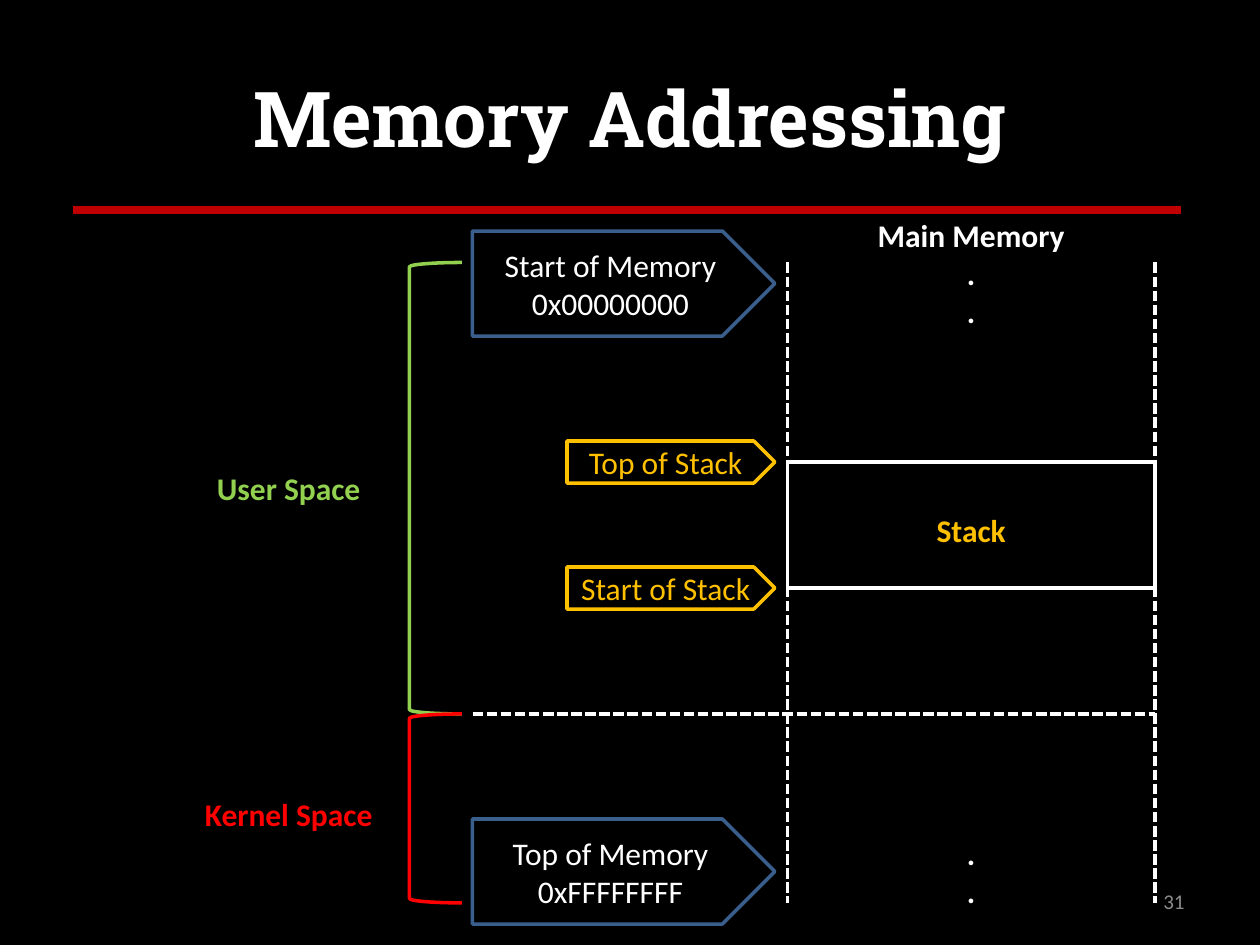
from lxml.etree import SubElement
from pptx import Presentation
from pptx.dml.color import RGBColor
from pptx.enum.dml import MSO_LINE
from pptx.enum.shapes import MSO_CONNECTOR, MSO_SHAPE
from pptx.enum.text import MSO_ANCHOR, PP_ALIGN
from pptx.oxml.ns import qn
from pptx.util import Pt

COLORS = {
    "black": "000000", "white": "FFFFFF", "rule": "C00000", "blue": "3A5F8C",
    "gold": "FFC000", "green": "92D050", "red": "FF0000", "gray": "8C8C8C",
}
MEMORY_LEFT, MEMORY_RIGHT = 450, 660
MEMORY_TOP, MEMORY_BOTTOM = 150, 516
MEMORY_WIDTH = MEMORY_RIGHT - MEMORY_LEFT
KERNEL_TOP = 408
POINTER_TIP = 442.8


def color(name):
    return RGBColor.from_string(COLORS[name])


def write(shape, lines, color_name, size=18, bold=False, font="Calibri", align=PP_ALIGN.CENTER):
    """Fill a shape with one vertically centred paragraph per line."""
    frame = shape.text_frame
    frame.text = "\n".join(lines)
    frame.word_wrap = True
    frame.vertical_anchor = MSO_ANCHOR.MIDDLE
    for paragraph in frame.paragraphs:
        paragraph.alignment = align
        for name, value in {"name": font, "size": Pt(size), "bold": bold}.items():
            setattr(paragraph.font, name, value)
        paragraph.font.color.rgb = color(color_name)


presentation = Presentation()
presentation.slide_width, presentation.slide_height = Pt(720), Pt(540)
slide = presentation.slides.add_slide(presentation.slide_layouts[5])
slide.background.fill.solid()
slide.background.fill.fore_color.rgb = color("black")

title = slide.shapes.title
title.left, title.top, title.width, title.height = Pt(36), Pt(21.6), Pt(648), Pt(90)
write(title, ["Memory Addressing"], "white", size=44, bold=True, font="Roboto Slab")

# Title rule, memory edges and the border between user and kernel space
for x1, y1, x2, y2, color_name, width, dash in [
    (42, 120, 675, 120, "rule", 5, None),
    (MEMORY_LEFT, MEMORY_TOP, MEMORY_LEFT, MEMORY_BOTTOM, "white", 2, MSO_LINE.SQUARE_DOT),
    (MEMORY_RIGHT, MEMORY_TOP, MEMORY_RIGHT, MEMORY_BOTTOM, "white", 2, MSO_LINE.SQUARE_DOT),
    (270, KERNEL_TOP, MEMORY_RIGHT, KERNEL_TOP, "white", 2, MSO_LINE.SQUARE_DOT),
]:
    line = slide.shapes.add_connector(MSO_CONNECTOR.STRAIGHT, Pt(x1), Pt(y1), Pt(x2), Pt(y2))
    line.line.color.rgb = color(color_name)
    line.line.width = Pt(width)
    if dash:
        line.line.dash_style = dash
    SubElement(line._element.spPr, qn("a:effectLst"))

# Stack block, address pointers and space brackets
PLATE, BRACKET = MSO_SHAPE.PENTAGON, MSO_SHAPE.RIGHT_BRACKET
for kind, left, top, right, height, line_color, lines, text_color in [
    (MSO_SHAPE.RECTANGLE, MEMORY_LEFT, 264, MEMORY_RIGHT, 72, "white", [], None),
    (PLATE, 270, 132, POINTER_TIP, 60, "blue", ["Start of Memory", "0x00000000"], "white"),
    (PLATE, 324, 252, POINTER_TIP, 24, "gold", ["Top of Stack"], "gold"),
    (PLATE, 324, 324, POINTER_TIP, 24, "gold", ["Start of Stack"], "gold"),
    (PLATE, 270, 468, POINTER_TIP, 60, "blue", ["Top of Memory", "0xFFFFFFFF"], "white"),
    (BRACKET, 234, MEMORY_TOP, 264, KERNEL_TOP - MEMORY_TOP, "green", [], None),
    (BRACKET, 234, KERNEL_TOP, 264, MEMORY_BOTTOM - KERNEL_TOP, "red", [], None),
]:
    shape = slide.shapes.add_shape(kind, Pt(left), Pt(top), Pt(right - left), Pt(height))
    shape.shadow.inherit = False
    shape.fill.background()
    shape.line.color.rgb = color(line_color)
    shape.line.width = Pt(2)
    if kind == BRACKET:
        shape._element.spPr.xfrm.set("flipH", "1")
    if lines:
        shape.text_frame.margin_left = shape.text_frame.margin_right = 0
        write(shape, lines, text_color)

# Labels
for left, top, width, height, lines, text_color in [
    (MEMORY_LEFT, 126, MEMORY_WIDTH, 60, ["Main Memory", ".", "."], "white"),
    (MEMORY_LEFT, 288, MEMORY_WIDTH, 30, ["Stack"], "gold"),
    (MEMORY_LEFT, 474, MEMORY_WIDTH, 48, [".", "."], "white"),
    (96, 264, 138, 30, ["User Space"], "green"),
    (96, 450, 138, 30, ["Kernel Space"], "red"),
]:
    label = slide.shapes.add_textbox(Pt(left), Pt(top), Pt(width), Pt(height))
    write(label, lines, text_color, bold=True)

page_number = slide.shapes.add_textbox(Pt(516), Pt(500.5), Pt(168), Pt(28.75))
write(page_number, ["31"], "gray", size=12, align=PP_ALIGN.RIGHT)

presentation.save("out.pptx")
